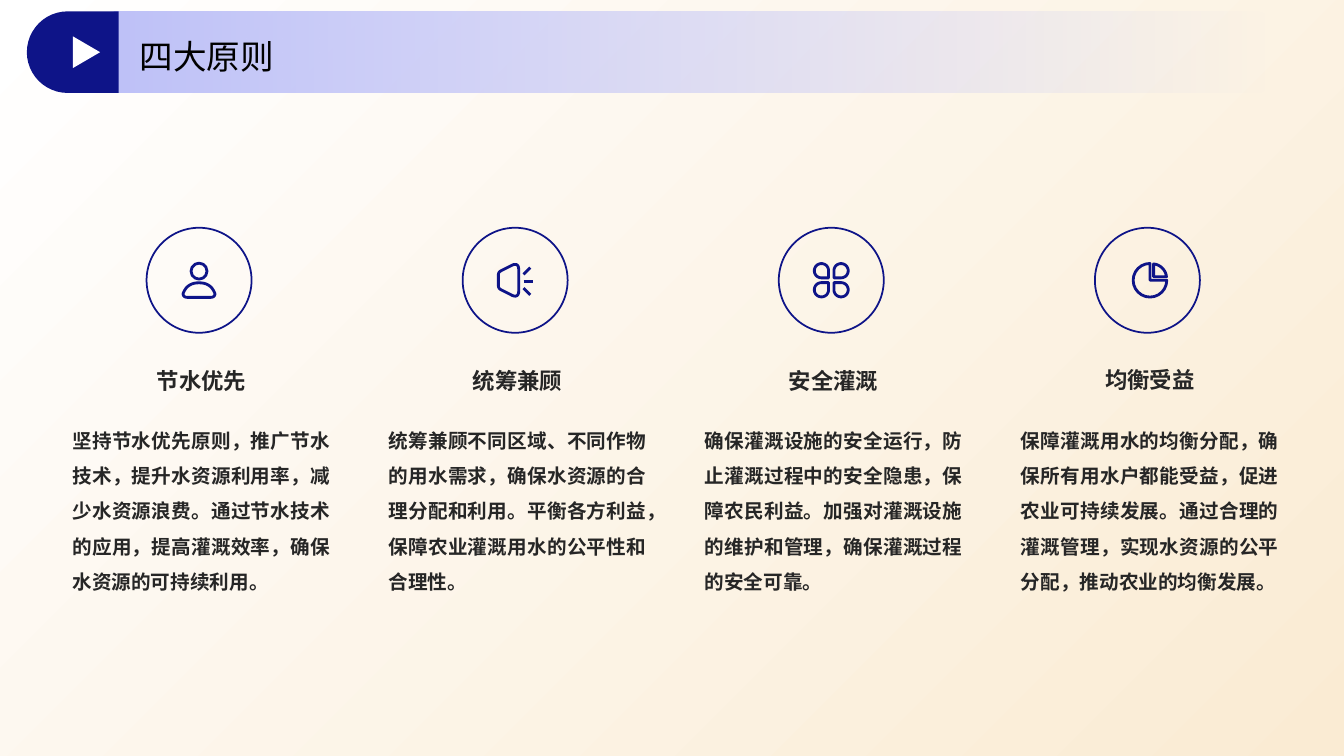
from lxml.etree import SubElement
from pptx import Presentation
from pptx.dml.color import RGBColor
from pptx.enum.shapes import MSO_CONNECTOR, MSO_SHAPE
from pptx.enum.text import MSO_ANCHOR, MSO_AUTO_SIZE, PP_ALIGN
from pptx.oxml.ns import qn
from pptx.util import Pt

FONT = "Noto Sans CJK SC"
NAVY, LAVENDER, INK = "0E1488", "BEC1F8", "262626"
COLUMN_LEFT, COLUMN_STEP, COLUMN_WIDTH = 51.8, 225.8, 184.2
ICON_LEFT, ICON_TOP, CIRCLE = 142.2, 200.2, 75
ICON_LINE = 2


def rgb(color):
    return RGBColor.from_string(color)


def add_filled(slide, kind, left, top, width, height, color, rotation=0):
    shape = slide.shapes.add_shape(kind, Pt(left), Pt(top), Pt(width), Pt(height))
    shape.shadow.inherit = False
    shape.rotation = rotation
    shape.fill.solid()
    shape.fill.fore_color.rgb = rgb(color)
    shape.line.fill.background()
    return shape


def style_outline(shape, weight):
    shape.shadow.inherit = False
    shape.fill.background()
    shape.line.color.rgb = rgb(NAVY)
    shape.line.width = Pt(weight)


def add_outline(slide, kind, center_x, center_y, size, weight):
    shape = slide.shapes.add_shape(
        kind, Pt(center_x - size / 2), Pt(center_y - size / 2), Pt(size), Pt(size))
    style_outline(shape, weight)


def curve_points(start, bends, steps=10):
    points, last = [], start
    for bend in bends:
        if len(bend) == 2:
            points.append(bend)
        else:
            for step in range(1, steps + 1):
                t = step / steps
                weights = ((1 - t) ** 3, 3 * t * (1 - t) ** 2, 3 * t * t * (1 - t), t ** 3)
                points.append(tuple(
                    sum(w * v for w, v in zip(weights, (last[axis], *bend[axis::2])))
                    for axis in (0, 1)))
        last = points[-1]
    return points


def add_curve(slide, x, y, start, bends, mirrors=((1, 1),)):
    builder = None
    for side, level in mirrors:
        first, *rest = [(Pt(x + side * dx), Pt(y + level * dy))
                        for dx, dy in [start, *curve_points(start, bends)]]
        if builder is None:
            builder = slide.shapes.build_freeform(*first)
        else:
            builder.move_to(*first)
        builder.add_line_segments(rest, close=True)
    style_outline(builder.convert_to_shape(), ICON_LINE)


def add_stroke(slide, x1, y1, x2, y2):
    line = slide.shapes.add_connector(
        MSO_CONNECTOR.STRAIGHT, Pt(x1), Pt(y1), Pt(x2), Pt(y2))
    line.line.color.rgb = rgb(NAVY)
    line.line.width = Pt(ICON_LINE)
    SubElement(line._element.spPr, qn("a:effectLst"))


def set_gradient(fill, colors, angle):
    fill.gradient()
    fill.gradient_angle = angle
    for stop, position, color in zip(fill.gradient_stops, (0, 1), colors):
        stop.position = position
        stop.color.rgb = rgb(color)


def write_text(shape, text, size, color, bold, spacing, align, anchor):
    frame = shape.text_frame
    frame.word_wrap = True
    frame.auto_size = MSO_AUTO_SIZE.NONE
    frame.vertical_anchor = anchor
    frame.margin_left = frame.margin_right = frame.margin_top = frame.margin_bottom = 0
    paragraph = frame.paragraphs[0]
    paragraph.alignment = align
    paragraph.line_spacing = spacing
    run = paragraph.add_run()
    run.text = text
    run.font.size = Pt(size)
    run.font.bold = bold
    run.font.color.rgb = rgb(color)
    run.font.name = FONT
    SubElement(run._r.get_or_add_rPr(), qn("a:ea")).set("typeface", FONT)


def add_text(slide, left, top, height, text, size, spacing, align, anchor):
    box = slide.shapes.add_textbox(Pt(left), Pt(top), Pt(COLUMN_WIDTH), Pt(height))
    write_text(box, text, size, INK, True, spacing, align, anchor)


def draw_person(slide, x, y):
    add_outline(slide, MSO_SHAPE.OVAL, x, y - 6.5, 11.4, ICON_LINE)
    add_curve(slide, x, y, (0, 1.8), [
        (-6.5, 1.8, -9.5, 5, -11.2, 9), (-11.8, 10.9, -10.5, 12.2, -8.5, 12.2),
        (8.5, 12.2), (10.5, 12.2, 11.8, 10.9, 11.2, 9), (9.5, 5, 6.5, 1.8, 0, 1.8)])


def draw_speaker(slide, x, y):
    add_curve(slide, x, y, (-12, -3.5), [
        (-12, -5.3, -11.3, -6.2, -10, -6.8), (-2, -10.9),
        (0.8, -12, 2.5, -11, 2.5, -8), (2.5, 8), (2.5, 11, 0.8, 12, -2, 10.9),
        (-10, 6.8), (-11.3, 6.2, -12, 5.3, -12, 3.5)])
    for x1, y1, x2, y2 in ((6, -4.2, 10.8, -9), (6, 0.8, 13, 0.8), (6, 5.6, 10.8, 10.4)):
        add_stroke(slide, x + x1, y + y1, x + x2, y + y2)


def draw_clover(slide, x, y):
    add_curve(slide, x, y, (1.9, 1.7), [
        (7, 1.7), (9.8, 1.7, 12.1, 4, 12.1, 6.8), (12.1, 9.6, 9.8, 11.9, 7, 11.9),
        (4.2, 11.9, 1.9, 9.6, 1.9, 6.8)], ((-1, -1), (1, -1), (-1, 1), (1, 1)))


def draw_pie(slide, x, y):
    add_outline(slide, MSO_SHAPE.PIE, x + 1.8, y, 24, ICON_LINE)
    add_curve(slide, x, y, (4.4, -2.5), [
        (4.4, -11.7), (9.1, -11.2, 13.1, -7.4, 13.6, -2.5)])


PRINCIPLES = (
    ("节水优先", 244.1, draw_person,
     "坚持节水优先原则，推广节水技术，提升水资源利用率，减少水资源浪费。"
     "通过节水技术的应用，提高灌溉效率，确保水资源的可持续利用。"),
    ("统筹兼顾", 244.1, draw_speaker,
     "统筹兼顾不同区域、不同作物的用水需求，确保水资源的合理分配和利用。"
     "平衡各方利益，保障农业灌溉用水的公平性和合理性。"),
    ("安全灌溉", 244.1, draw_clover,
     "确保灌溉设施的安全运行，防止灌溉过程中的安全隐患，保障农民利益。"
     "加强对灌溉设施的维护和管理，确保灌溉过程的安全可靠。"),
    ("均衡受益", 243, draw_pie,
     "保障灌溉用水的均衡分配，确保所有用水户都能受益，促进农业可持续发展。"
     "通过合理的灌溉管理，实现水资源的公平分配，推动农业的均衡发展。"),
)


def add_principle(slide, index, heading, heading_top, draw_icon, detail):
    shift = index * COLUMN_STEP
    left, center = COLUMN_LEFT + shift, ICON_LEFT + shift
    add_text(slide, left, heading_top, 54, heading, 16, 1.1,
             PP_ALIGN.CENTER, MSO_ANCHOR.MIDDLE)
    add_text(slide, left, 297.9, 111.6, detail, 14, 1.5,
             PP_ALIGN.JUSTIFY, MSO_ANCHOR.TOP)
    add_outline(slide, MSO_SHAPE.OVAL, center, ICON_TOP, CIRCLE, 1.25)
    draw_icon(slide, center, ICON_TOP)


def add_header(slide, title_text):
    bar = add_filled(slide, MSO_SHAPE.ROUNDED_RECTANGLE, 72, 8.3, 835.2, 58, LAVENDER)
    set_gradient(bar.fill, (LAVENDER, LAVENDER), 0)
    faded = bar._element.xpath(".//a:gs/a:srgbClr")[-1]
    SubElement(faded, qn("a:alpha")).set("val", "0")
    tab = add_filled(slide, MSO_SHAPE.ROUND_2_SAME_RECTANGLE,
                     22.8, 4.5, 58.3, 65.5, NAVY, 270)
    tab.adjustments[0] = 0.5
    add_filled(slide, MSO_SHAPE.ISOSCELES_TRIANGLE, 50.5, 27.6, 22.6, 19.4, "FFFFFF", 90)
    title = slide.shapes.title
    title.left, title.top, title.width, title.height = Pt(99.7), Pt(19.2), Pt(612.7), Pt(38.9)
    write_text(title, title_text, 24, "000000", False, 1.1, PP_ALIGN.LEFT, MSO_ANCHOR.MIDDLE)
    bar._element.getparent().append(title._element)


def main():
    presentation = Presentation()
    presentation.slide_width, presentation.slide_height = Pt(960), Pt(540)
    slide = presentation.slides.add_slide(presentation.slide_layouts[5])
    backdrop = add_filled(slide, MSO_SHAPE.RECTANGLE, 0, 0, 960, 540, "FFFFFF")
    set_gradient(backdrop.fill, ("FFFFFF", "FAEBD3"), 315)
    for index, principle in enumerate(PRINCIPLES):
        add_principle(slide, index, *principle)
    add_header(slide, "四大原则")
    presentation.save("out.pptx")


if __name__ == "__main__":
    main()
